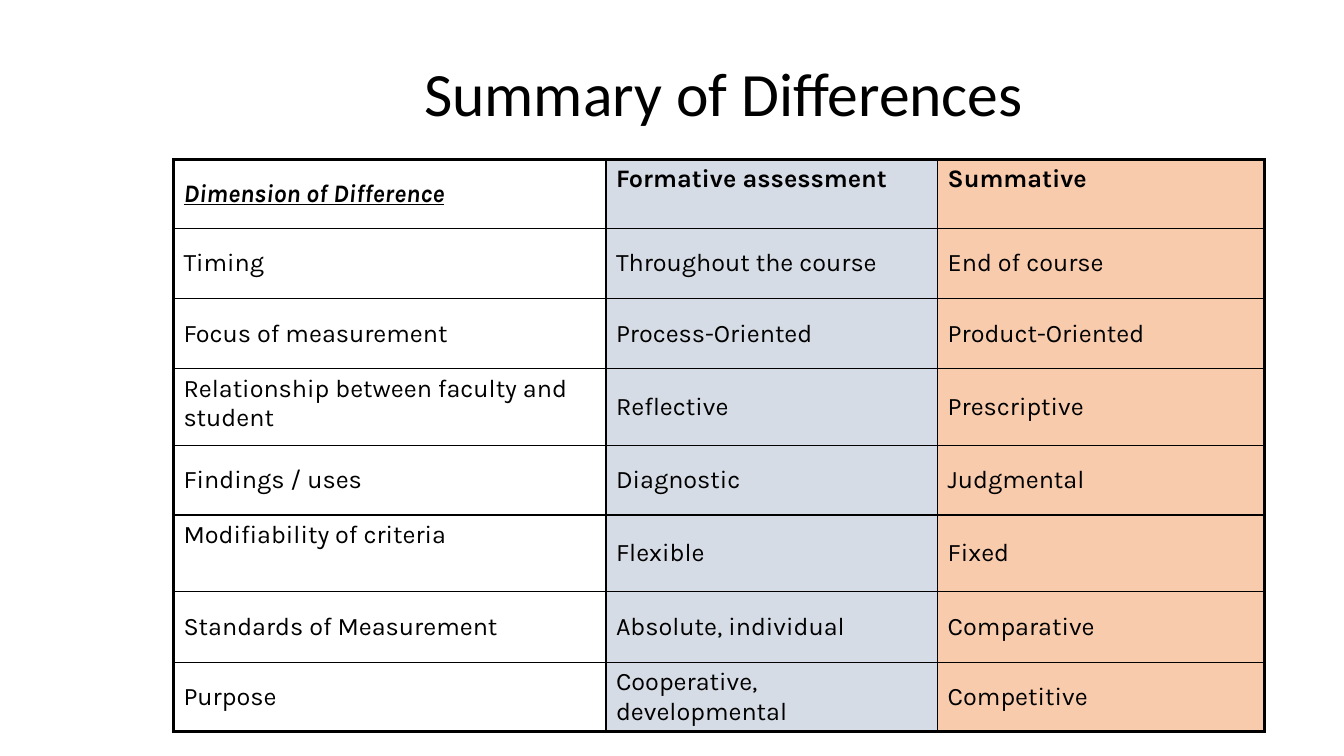
from pptx import Presentation
from pptx import util as u
from pptx.dml.color import RGBColor
from pptx.enum import text
from pptx.oxml.ns import qn
from lxml import etree

BLACK = RGBColor(0x00, 0x00, 0x00)
BLUE = RGBColor(0xD6, 0xDC, 0xE5)
ORANGE = RGBColor(0xF8, 0xCB, 0xAD)
COLUMN_FILLS = [None, BLUE, ORANGE]
COLUMN_WIDTHS = [4.29, 3.29, 3.24]
ROW_HEIGHTS = [0.69, 0.69, 0.7, 0.76, 0.69, 0.76, 0.7, 0.69]
THIN, THICK = 1, 2.25
ROWS = [
    ("Dimension of Difference", "Formative assessment", "Summative"),
    ("Timing", "Throughout the course", "End of course"),
    ("Focus of measurement", "Process-Oriented", "Product-Oriented"),
    ("Relationship between faculty and student", "Reflective", "Prescriptive"),
    ("Findings / uses", "Diagnostic", "Judgmental"),
    ("Modifiability of criteria", "Flexible", "Fixed"),
    ("Standards of Measurement", "Absolute, individual", "Comparative"),
    ("Purpose", "Cooperative, developmental", "Competitive"),
]
TOP_ANCHORED = {(0, 1), (0, 2), (3, 0), (5, 0)}


def write(tf, words, size=18, font="Karla", bold=False, italic=False,
          underline=False, align=text.PP_ALIGN.LEFT, spacing=None):
    p = tf.paragraphs[0]
    p.alignment = align
    p.line_spacing = spacing
    r = p.add_run()
    r.text = words
    r.font.name = font
    r.font.size = u.Pt(size)
    r.font.bold = bold
    r.font.italic = italic
    r.font.underline = underline
    r.font.color.rgb = BLACK


def set_borders(cell, widths):
    tc_pr = cell._tc.get_or_add_tcPr()
    for side, width in zip("LRTB", widths):
        ln = etree.SubElement(tc_pr, qn(f"a:ln{side}"), w=str(u.Pt(width)))
        fill = etree.SubElement(ln, qn("a:solidFill"))
        etree.SubElement(fill, qn("a:srgbClr"), val=str(BLACK))


def add_title(s, words):
    sp = s.shapes.title
    sp.left, sp.top = u.Inches(2.92), u.Inches(0.33)
    sp.width, sp.height = u.Inches(8.52), u.Inches(1.25)
    sp.text_frame.vertical_anchor = text.MSO_ANCHOR.MIDDLE
    write(sp.text_frame, words, size=44, font="Calibri",
          align=text.PP_ALIGN.CENTER, spacing=0.9)


def format_cell(cell, row, col):
    edges = (col == 0, col == len(COLUMN_WIDTHS) - 1,
             row == 0, row == len(ROWS) - 1)
    set_borders(cell, [THICK if edge else THIN for edge in edges])
    if COLUMN_FILLS[col] is None:
        cell.fill.background()
    else:
        cell.fill.solid()
        cell.fill.fore_color.rgb = COLUMN_FILLS[col]
    top = (row, col) in TOP_ANCHORED
    cell.vertical_anchor = text.MSO_ANCHOR.TOP if top else text.MSO_ANCHOR.MIDDLE
    cell.margin_left = cell.margin_right = u.Inches(0.1)
    cell.margin_top = cell.margin_bottom = u.Inches(0.05)


def add_comparison(s):
    table = s.shapes.add_table(
        len(ROWS), len(COLUMN_WIDTHS), u.Inches(1.72), u.Inches(1.58),
        u.Inches(sum(COLUMN_WIDTHS)), u.Inches(sum(ROW_HEIGHTS))).table
    table.first_row = table.horz_banding = False
    for column, width in zip(table.columns, COLUMN_WIDTHS):
        column.width = u.Inches(width)
    for row, words in enumerate(ROWS):
        table.rows[row].height = u.Inches(ROW_HEIGHTS[row])
        for col, word in enumerate(words):
            cell = table.cell(row, col)
            format_cell(cell, row, col)
            corner = row == col == 0
            write(cell.text_frame, word, bold=row == 0,
                  italic=corner, underline=corner)


def main():
    prs = Presentation()
    prs.slide_width, prs.slide_height = u.Inches(13.33), u.Inches(7.5)
    s = prs.slides.add_slide(prs.slide_layouts[5])
    add_title(s, "Summary of Differences")
    add_comparison(s)
    prs.save("out.pptx")


if __name__ == "__main__":
    main()
